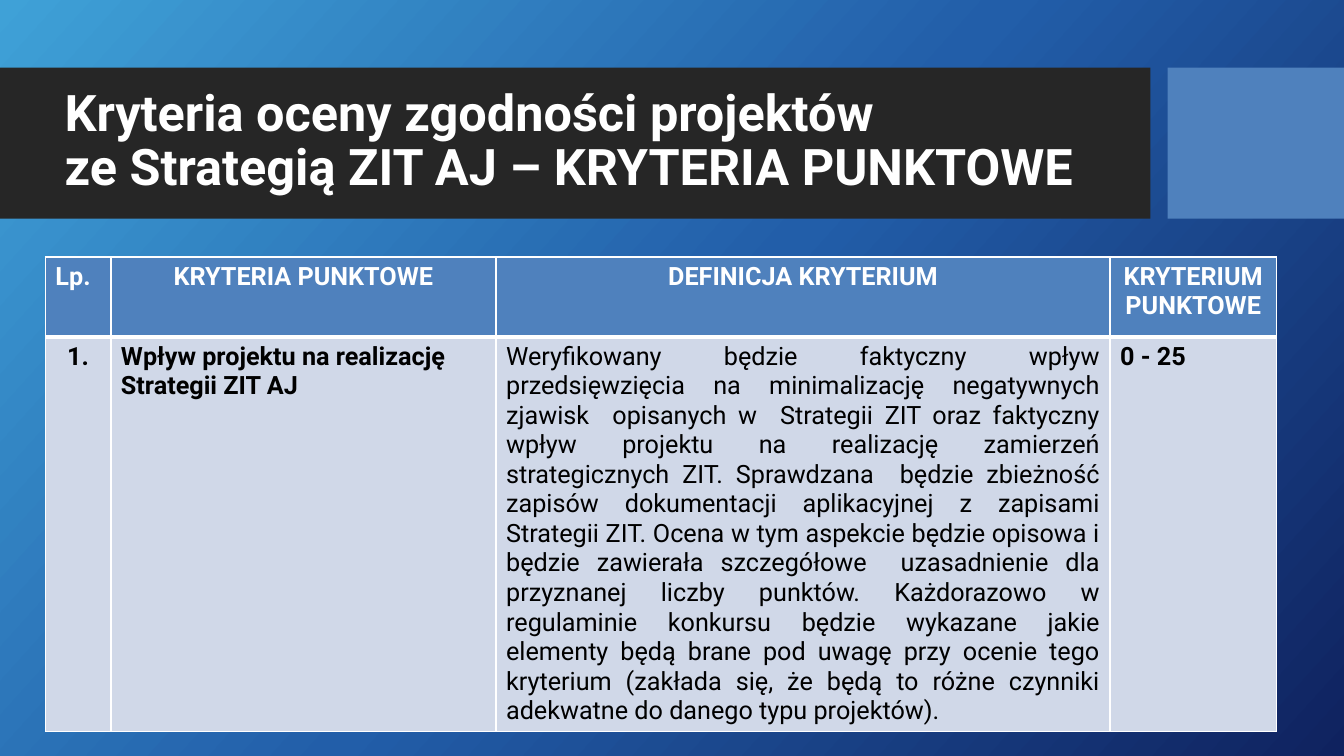
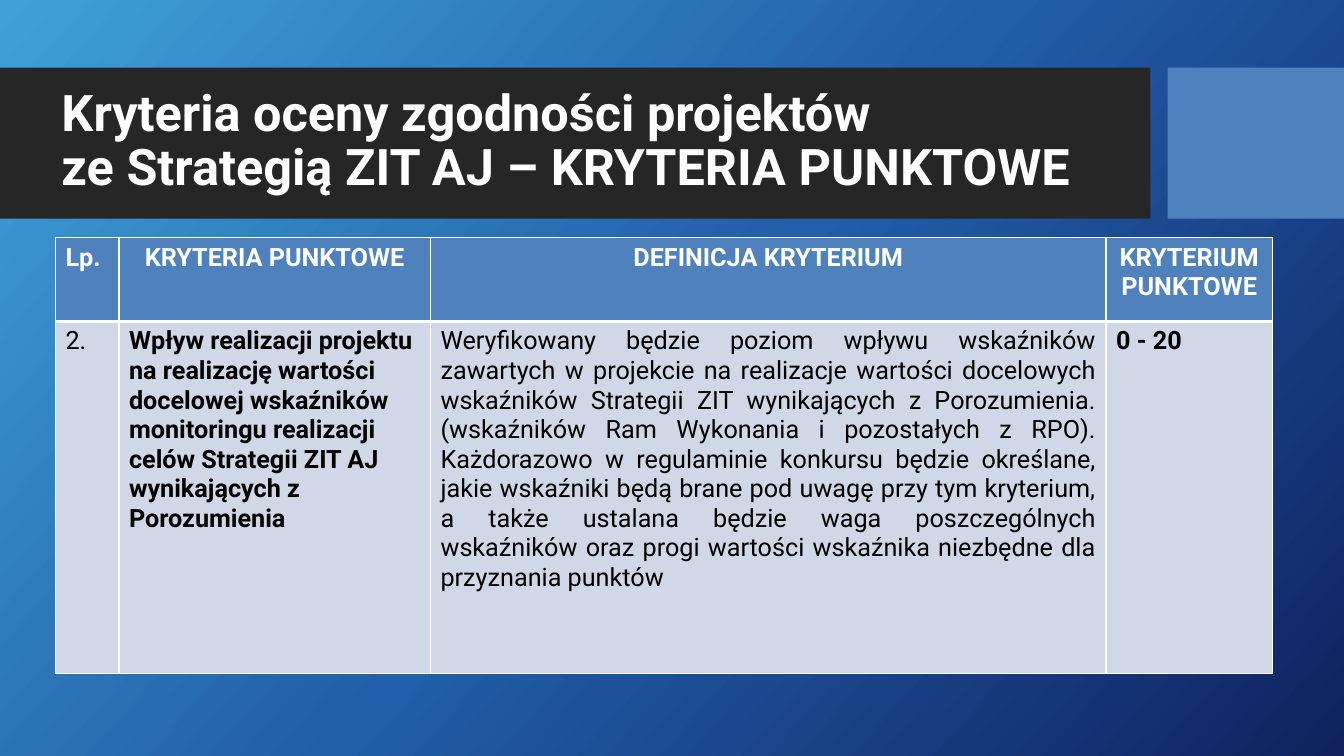
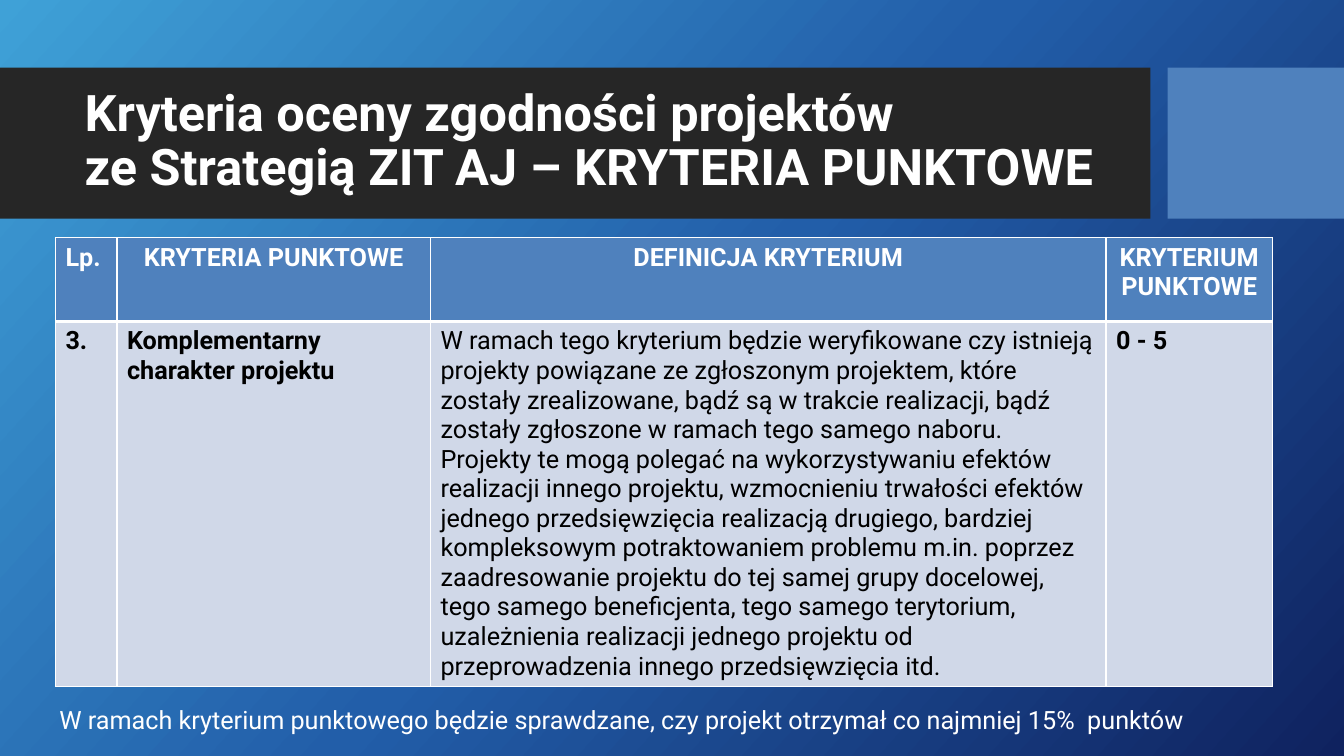
from copy import deepcopy
from dataclasses import dataclass

from lxml.etree import SubElement
from pptx import Presentation
from pptx.dml.color import RGBColor
from pptx.enum.shapes import MSO_SHAPE
from pptx.enum.text import MSO_ANCHOR, PP_ALIGN
from pptx.oxml.ns import qn
from pptx.util import Emu, Pt

SCALE = 9144
LEFT, CENTER, JUSTIFY = PP_ALIGN.LEFT, PP_ALIGN.CENTER, PP_ALIGN.JUSTIFY


def px(value):
    return Emu(value * SCALE)


def rgb(value):
    return RGBColor.from_string(value)


@dataclass(frozen=True)
class Theme:
    font: str = "Roboto"
    title_size: int = 36
    text_size: int = 18
    thin_line: int = 1
    thick_line: int = 3
    light: str = "FFFFFF"
    ink: str = "000000"
    band: str = "262626"
    accent: str = "4F81BD"
    cell: str = "D0D8E8"
    gradient: tuple = ((0, "3FA1D7"), (0.5, "225EA9"), (1, "0F225F"))
    gradient_angle: int = 42


@dataclass(frozen=True)
class Entry:
    paragraphs: tuple
    alignment: PP_ALIGN = LEFT
    bold: bool = True


class Deck:
    def __init__(self, theme):
        self.theme = theme
        self.presentation = Presentation()
        self.presentation.slide_width = px(1333)
        self.presentation.slide_height = px(750)
        self.layout = self.presentation.slide_layouts[5]
        self.slide = None
        self.style_background()

    def style_background(self):
        for placeholder in list(self.layout.placeholders)[1:]:
            self.layout.shapes.element.remove(placeholder.element)
        fill = self.layout.background.fill
        fill.gradient()
        fill.gradient_angle = 360 - self.theme.gradient_angle
        first_stop = fill.gradient_stops[0].element
        first_stop.addnext(deepcopy(first_stop))
        for stop, (position, color) in zip(fill.gradient_stops, self.theme.gradient):
            stop.position = position
            stop.color.rgb = rgb(color)

    def add_slide(self):
        is_first = self.slide is None
        self.slide = self.presentation.slides.add_slide(self.layout)
        if is_first:
            self.add_layout_bands()

    def add_layout_bands(self):
        bands = [
            self.band(0, 1141, self.theme.band),
            self.band(1158, 175, self.theme.accent),
        ]
        for index, band in enumerate(bands, 2):
            self.layout.shapes.element.insert(index, band.element)

    def band(self, left, width, color):
        shape = self.slide.shapes.add_shape(
            MSO_SHAPE.RECTANGLE, px(left), px(67), px(width), px(150)
        )
        shape.shadow.inherit = False
        shape.fill.solid()
        shape.fill.fore_color.rgb = rgb(color)
        shape.line.fill.background()
        return shape

    def add_text(self, text_frame, entry, size, color):
        for index, text in enumerate(entry.paragraphs):
            paragraph = text_frame.add_paragraph() if index else text_frame.paragraphs[0]
            paragraph.alignment = entry.alignment
            for line_index, line in enumerate(text.split("\n")):
                if line_index:
                    paragraph.add_line_break()
                run = paragraph.add_run()
                run.text = line
                run.font.name = self.theme.font
                run.font.size = Pt(size)
                run.font.bold = entry.bold
                run.font.color.rgb = rgb(color)

    def title(self, text, left):
        title = self.slide.shapes.title
        title.left, title.top = px(left), px(82)
        title.width, title.height = px(1126 - left), px(118)
        text_frame = title.text_frame
        text_frame.word_wrap = True
        text_frame.vertical_anchor = MSO_ANCHOR.MIDDLE
        self.add_text(text_frame, Entry((text,)), self.theme.title_size, self.theme.light)
        text_frame.paragraphs[0].line_spacing = 0.9

    def table(self, left, top, columns, rows, header, body):
        table = self.slide.shapes.add_table(
            2, len(columns), px(left), px(top), px(sum(columns)), px(sum(rows))
        ).table
        table.horz_banding = False
        for column, width in zip(table.columns, columns):
            column.width = px(width)
        for row, height in zip(table.rows, rows):
            row.height = px(height)
        thin, thick = self.theme.thin_line, self.theme.thick_line
        styles = (
            (header, self.theme.accent, self.theme.light, thin, thick),
            (body, self.theme.cell, self.theme.ink, thick, thin),
        )
        for row, (entries, fill, color, above, below) in zip(table.rows, styles):
            for cell, entry in zip(row.cells, entries):
                self.add_text(cell.text_frame, entry, self.theme.text_size, color)
                self.borders(cell, {"L": thin, "R": thin, "T": above, "B": below})
                cell.fill.solid()
                cell.fill.fore_color.rgb = rgb(fill)

    def borders(self, cell, widths):
        properties = cell._tc.get_or_add_tcPr()
        for side, width in widths.items():
            line = SubElement(properties, qn(f"a:ln{side}"), w=str(Pt(width)))
            fill = SubElement(line, qn("a:solidFill"))
            SubElement(fill, qn("a:srgbClr"), val=self.theme.light)

    def note(self, text, left, top, width, height):
        box = self.slide.shapes.add_textbox(px(left), px(top), px(width), px(height))
        box.text_frame.word_wrap = True
        entry = Entry((text,), bold=False)
        self.add_text(box.text_frame, entry, self.theme.text_size, self.theme.light)


TITLE = "Kryteria oceny zgodności projektów\nze Strategią ZIT AJ – KRYTERIA PUNKTOWE"

HEADER = (
    Entry(("Lp.",)),
    Entry(("KRYTERIA PUNKTOWE",), CENTER),
    Entry(("DEFINICJA KRYTERIUM",), CENTER),
    Entry(("KRYTERIUM PUNKTOWE",), CENTER),
)

IMPACT = (
    Entry(("1.",), CENTER),
    Entry(("Wpływ projektu na realizację\nStrategii ZIT AJ",)),
    Entry((
        "Weryfikowany będzie faktyczny wpływ przedsięwzięcia na minimalizację "
        "negatywnych zjawisk  opisanych w  Strategii ZIT oraz faktyczny wpływ "
        "projektu na realizację zamierzeń strategicznych ZIT. Sprawdzana  będzie "
        "zbieżność zapisów dokumentacji aplikacyjnej z zapisami Strategii ZIT. "
        "Ocena w tym aspekcie będzie opisowa i będzie zawierała szczegółowe  "
        "uzasadnienie dla przyznanej liczby punktów. Każdorazowo w regulaminie "
        "konkursu będzie wykazane jakie elementy będą brane pod uwagę przy ocenie "
        "tego kryterium (zakłada się, że będą to różne czynniki adekwatne do "
        "danego typu projektów).",
    ), JUSTIFY, False),
    Entry(("0 - 25",)),
)

INDICATORS = (
    Entry(("2.",), JUSTIFY, False),
    Entry((
        "Wpływ realizacji projektu na realizację wartości docelowej wskaźników "
        "monitoringu realizacji celów Strategii ZIT AJ wynikających z Porozumienia",
    )),
    Entry((
        "Weryfikowany będzie poziom wpływu wskaźników zawartych w projekcie na "
        "realizacje wartości docelowych wskaźników Strategii ZIT wynikających z "
        "Porozumienia. (wskaźników Ram Wykonania i pozostałych z RPO). Każdorazowo "
        "w regulaminie konkursu będzie określane, jakie wskaźniki będą brane pod "
        "uwagę przy tym kryterium, a także ustalana będzie waga poszczególnych "
        "wskaźników oraz progi wartości wskaźnika niezbędne dla przyznania punktów",
    ), JUSTIFY, False),
    Entry(("0 - 20",), JUSTIFY),
)

COMPLEMENTARITY = (
    Entry(("3.",), JUSTIFY),
    Entry(("Komplementarny charakter projektu",), JUSTIFY),
    Entry((
        "W ramach tego kryterium będzie weryfikowane czy istnieją projekty "
        "powiązane ze zgłoszonym projektem, które zostały zrealizowane, bądź są w "
        "trakcie realizacji, bądź zostały zgłoszone w ramach tego samego naboru.",
        "Projekty te mogą polegać na wykorzystywaniu efektów realizacji innego "
        "projektu, wzmocnieniu trwałości efektów jednego przedsięwzięcia realizacją "
        "drugiego, bardziej kompleksowym potraktowaniem problemu m.in. poprzez "
        "zaadresowanie projektu do tej samej grupy docelowej, tego samego "
        "beneficjenta, tego samego terytorium, uzależnienia realizacji jednego "
        "projektu od przeprowadzenia innego przedsięwzięcia itd.",
    ), LEFT, False),
    Entry(("0 - 5",), JUSTIFY),
)

CRITERIA = (
    (54, 45, 255, (65, 382, 609, 165), (79, 349), IMPACT),
    (51, 55, 236, (63, 309, 670, 165), (83, 349), INDICATORS),
    (74, 55, 236, (61, 311, 670, 165), (83, 349), COMPLEMENTARITY),
)


def main():
    deck = Deck(Theme())
    for title_left, left, top, columns, rows, body in CRITERIA:
        deck.add_slide()
        deck.title(TITLE, title_left)
        deck.table(left, top, columns, rows, HEADER, body)
    deck.note(
        "W ramach kryterium punktowego będzie sprawdzane, czy projekt otrzymał "
        "co najmniej 15%  punktów",
        49, 694, 1174, 40,
    )
    deck.presentation.save("out.pptx")


if __name__ == "__main__":
    main()
